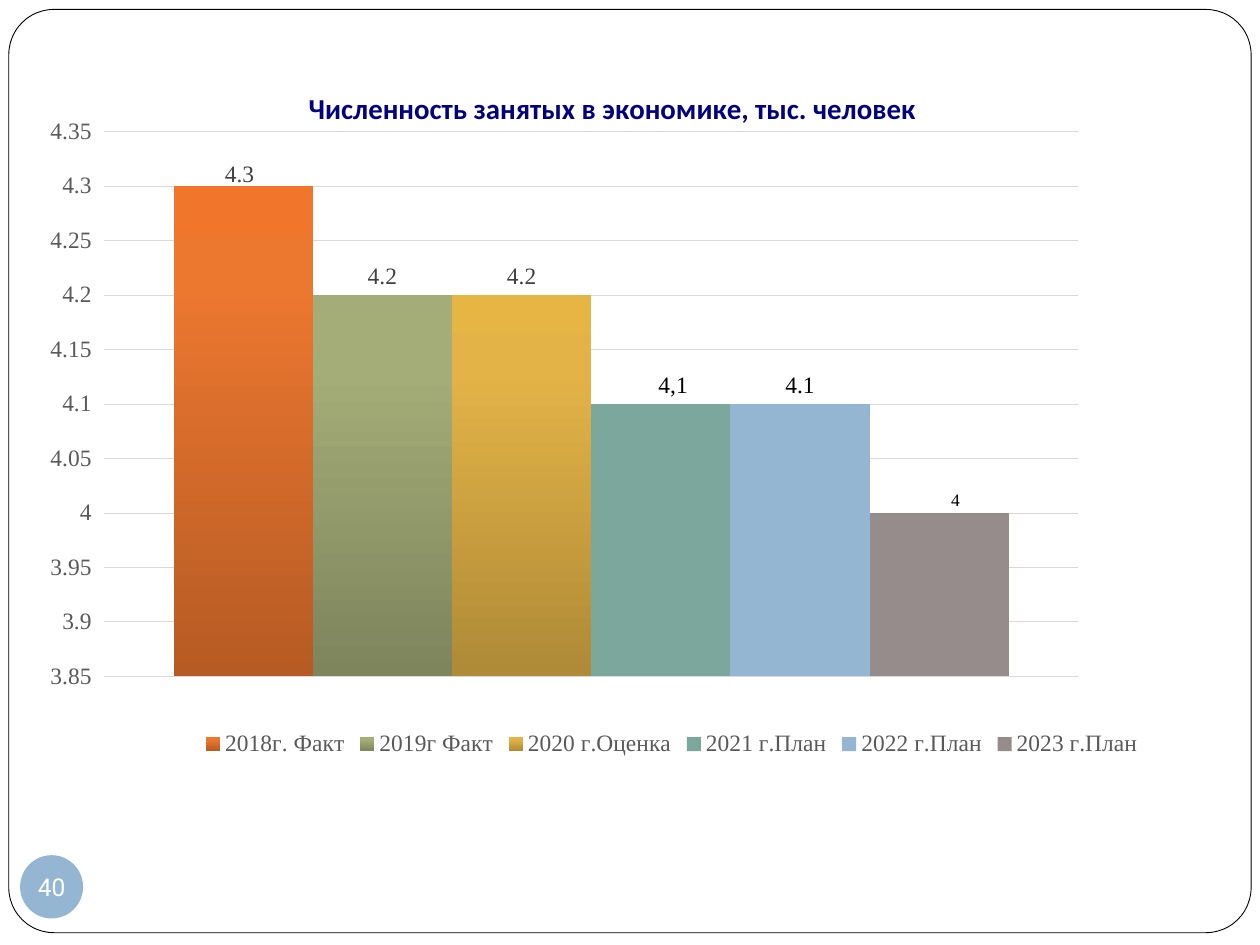
from dataclasses import dataclass

from lxml.etree import SubElement
from pptx import Presentation
from pptx.chart.data import CategoryChartData
from pptx.dml.color import RGBColor
from pptx.enum.chart import XL_CHART_TYPE as ChartType
from pptx.enum.chart import XL_LABEL_POSITION as LabelPosition
from pptx.enum.chart import XL_LEGEND_POSITION as LegendPosition
from pptx.enum.chart import XL_TICK_MARK as TickMark
from pptx.enum.shapes import MSO_SHAPE as Shape
from pptx.enum.text import MSO_ANCHOR as Anchor
from pptx.enum.text import PP_ALIGN as Align
from pptx.oxml.ns import qn
from pptx.util import Inches, Pt


@dataclass(frozen=True)
class Theme:
    serif: str = "Times New Roman"
    sans: str = "Roboto"
    heading: str = "Calibri"
    paper: str = "FFFFFF"
    ink: str = "000000"
    navy: str = "000080"
    muted: str = "595959"
    label: str = "404040"
    grid: str = "D9D9D9"
    accent: str = "94B6D2"
    small: float = 10
    body: float = 13.4
    number: float = 14
    title: float = 16.5


@dataclass(frozen=True)
class Bar:
    name: str
    value: float
    colors: tuple
    label_color: str
    label_size: float = Theme.body
    label_text: str = ""
    label_shift: tuple = ()


BARS = [
    Bar("2018г. Факт", 4.3, ("B65B24", "EC772F", "F1762C"), Theme.label, label_shift=(-0.003, 0.01)),
    Bar("2019г Факт", 4.2, ("7E845C", "A4AC77", "A6AE76"), Theme.label),
    Bar("2020 г.Оценка", 4.2, ("AF8A37", "E3B347", "E7B544"), Theme.label),
    Bar("2021 г.План", 4.1, ("7BA79D",), Theme.ink, label_text="4,1", label_shift=(0.01, 0)),
    Bar("2022 г.План", 4.1, (Theme.accent,), Theme.ink),
    Bar("2023 г.План", 4, ("968C8C",), Theme.ink, Theme.small, label_shift=(0.013, 0.004)),
]
GRADIENT_STOPS = (0, 80, 100)


class SlideBuilder:
    def __init__(self, deck, theme):
        self.deck = deck
        self.theme = theme
        self.slide = deck.slides.add_slide(deck.slide_layouts[6])

    def box(self, left, top, width, height):
        across, down = self.deck.slide_width, self.deck.slide_height
        return [round(share * side) for share, side in
                zip((left, top, width, height), (across, down, across, down))]

    def style(self, font, size, color, face=None, bold=False):
        font.size, font.name, font.bold = Pt(size), face or self.theme.serif, bold
        font.color.rgb = RGBColor.from_string(color)

    def paint(self, fill, color):
        fill.solid()
        fill.fore_color.rgb = RGBColor.from_string(color)

    def shape(self, kind, place, fill, line=None):
        shape = self.slide.shapes.add_shape(kind, *self.box(*place))
        shape.shadow.inherit = False
        self.paint(shape.fill, fill)
        if line:
            shape.line.color.rgb = RGBColor.from_string(line)
            shape.line.width = Pt(0.5)
        else:
            shape.line.fill.background()
        return shape

    def frame(self, place):
        self.shape(Shape.ROUNDED_RECTANGLE, place, self.theme.paper, self.theme.ink).adjustments[0] = 0.049

    def page_number(self, place, number):
        text = self.shape(Shape.OVAL, place, self.theme.accent).text_frame
        text.margin_left = text.margin_right = text.margin_top = text.margin_bottom = 0
        text.word_wrap = False
        text.vertical_anchor = Anchor.MIDDLE
        paragraph = text.paragraphs[0]
        paragraph.alignment = Align.CENTER
        run = paragraph.add_run()
        run.text = number
        self.style(run.font, self.theme.number, self.theme.paper, self.theme.sans)

    def shade(self, series, colors):
        fill = series.format.fill
        if len(colors) == 1:
            return self.paint(fill, colors[0])
        fill.gradient()
        fill.gradient_angle = 90
        stops = next(series._element.iter(qn("a:gsLst")))
        for stop in list(stops):
            stops.remove(stop)
        for share, color in zip(GRADIENT_STOPS, colors):
            stop = SubElement(stops, qn("a:gs"), pos=str(share * 1000))
            SubElement(stop, qn("a:srgbClr"), val=color)

    def arrange(self, parent, before, inner=False, edge=True, **shares):
        for old in parent.findall(qn("c:layout")):
            parent.remove(old)
        layout = SubElement(parent, qn("c:layout"))
        manual = SubElement(layout, qn("c:manualLayout"))
        if inner:
            SubElement(manual, qn("c:layoutTarget"), val="inner")
        if edge:
            for mode in ("xMode", "yMode"):
                SubElement(manual, qn(f"c:{mode}"), val="edge")
        for name, share in shares.items():
            SubElement(manual, qn(f"c:{name}"), val=str(share))
        parent.insert(before, layout)

    def bar(self, series, bar):
        self.shade(series, bar.colors)
        labels = series.data_labels
        labels.show_value = True
        labels.position = LabelPosition.OUTSIDE_END
        self.style(labels.font, bar.label_size, bar.label_color)
        if not bar.label_shift:
            return
        label = series.points[0].data_label
        if bar.label_text:
            run = label.text_frame.paragraphs[0].add_run()
            run.text = bar.label_text
            self.style(run.font, bar.label_size, bar.label_color)
        else:
            self.style(label.font, bar.label_size, bar.label_color)
        label.position = LabelPosition.OUTSIDE_END
        x, y = bar.label_shift
        self.arrange(next(series._element.iter(qn("c:dLbl"))), 1, edge=False, x=x, y=y)

    def column_chart(self, place, title, bars):
        theme = self.theme
        data = CategoryChartData()
        data.categories = [""]
        for bar in bars:
            data.add_series(bar.name, [bar.value])
        chart = self.slide.shapes.add_chart(ChartType.COLUMN_CLUSTERED, *self.box(*place), data).chart
        self.style(chart.font, theme.small, theme.ink)

        heading = chart.chart_title.text_frame.paragraphs[0].add_run()
        heading.text = title
        self.style(heading.font, theme.title, theme.navy, theme.heading, True)
        chart.chart_title.include_in_layout = False
        self.arrange(chart.chart_title._element, 1, x=0.203, y=0.02)

        chart.has_legend = True
        chart.legend.position = LegendPosition.BOTTOM
        chart.legend.include_in_layout = False
        self.style(chart.legend.font, theme.body, theme.muted)
        self.arrange(chart.legend._element, 1, x=0.118, y=0.953, w=0.765, h=0.047)

        chart.category_axis.visible = False
        values = chart.value_axis
        values.minimum_scale, values.maximum_scale, values.major_unit = 3.85, 4.35, 0.05
        values.major_tick_mark = values.minor_tick_mark = TickMark.CROSS
        values.format.line.fill.background()
        self.style(values.tick_labels.font, theme.body, theme.muted)
        grid = values.major_gridlines.format.line
        grid.color.rgb = RGBColor.from_string(theme.grid)
        grid.width = Pt(0.28)

        plot = chart.plots[0]
        plot.gap_width, plot.overlap, plot.vary_by_categories = 100, 0, False
        area = next(chart._chartSpace.iter(qn("c:plotArea")))
        self.arrange(area, 0, inner=True, x=0.042, y=0.09, w=0.787, h=0.782)
        for series, bar in zip(plot.series, bars):
            self.bar(series, bar)


def main():
    deck = Presentation()
    deck.slide_width, deck.slide_height = Inches(10), Inches(7.5)
    builder = SlideBuilder(deck, Theme())
    builder.frame((0.007, 0.01, 0.986, 0.977))
    builder.column_chart(
        (0.04, 0.073, 0.984, 0.737),
        "Численность занятых в экономике, тыс. человек",
        BARS,
    )
    builder.page_number((0.016, 0.905, 0.05, 0.067), "40")
    deck.save("out.pptx")


if __name__ == "__main__":
    main()
